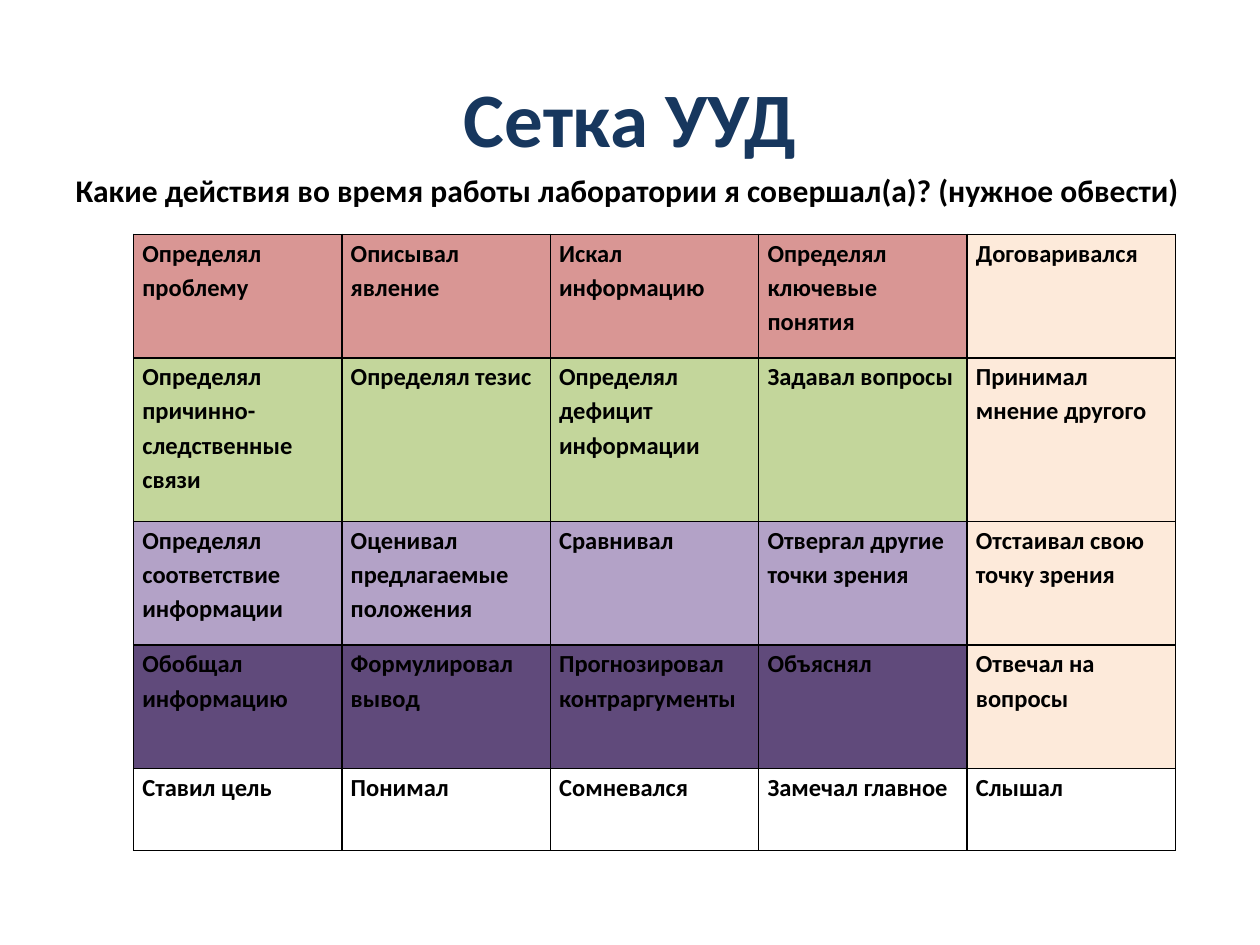
from dataclasses import dataclass

from lxml import etree
from pptx import Presentation
from pptx.dml.color import RGBColor
from pptx.enum.text import MSO_ANCHOR, PP_ALIGN
from pptx.oxml.ns import qn
from pptx.util import Inches, Pt

CENTER, LEFT = PP_ALIGN.CENTER, PP_ALIGN.LEFT
MIDDLE, TOP = MSO_ANCHOR.MIDDLE, MSO_ANCHOR.TOP
FONT = "Calibri"
COLORS = {
    "title": "17375E",
    "text": "000000",
    "border": "000000",
    "rose": "D99694",
    "green": "C3D69B",
    "lilac": "B3A2C7",
    "violet": "604A7B",
    "peach": "FDEADA",
}


@dataclass
class ActionRow:
    height: float
    fill: str | None
    last_fill: str | None
    actions: list[str]


ROWS = [
    ActionRow(0.98, "rose", "peach", [
        "Определял проблему", "Описывал явление", "Искал информацию",
        "Определял ключевые понятия", "Договаривался"]),
    ActionRow(1.3, "green", "peach", [
        "Определял причинно-следственные связи", "Определял тезис",
        "Определял дефицит информации", "Задавал вопросы",
        "Принимал мнение другого"]),
    ActionRow(0.98, "lilac", "peach", [
        "Определял соответствие информации", "Оценивал предлагаемые положения",
        "Сравнивал", "Отвергал другие точки зрения",
        "Отстаивал свою точку зрения"]),
    ActionRow(0.98, "violet", "peach", [
        "Обобщал информацию", "Формулировал вывод",
        "Прогнозировал контраргументы", "Объяснял", "Отвечал на вопросы"]),
    ActionRow(0.65, None, None, [
        "Ставил цель", "Понимал", "Сомневался", "Замечал главное", "Слышал"]),
]


def write_text(frame, text: str, *, size: float, color: str = "text",
               align=LEFT, line_spacing: float = 1.0, before: float = 0):
    para = frame.paragraphs[0]
    para.alignment = align
    para.line_spacing = line_spacing
    para.space_before = Pt(before)
    span = para.add_run()
    span.text = text
    span.font.name = FONT
    span.font.size = Pt(size)
    span.font.bold = True
    span.font.color.rgb = RGBColor.from_string(COLORS[color])
    return para


def place(box, left: float, top: float, width: float, height: float) -> None:
    box.left, box.top = Inches(left), Inches(top)
    box.width, box.height = Inches(width), Inches(height)


def remove_bullet(para) -> None:
    properties = para._p.get_or_add_pPr()
    properties.set("marL", "0")
    properties.set("indent", "0")
    etree.SubElement(properties, qn("a:buNone"))


def draw_borders(cell) -> None:
    properties = cell._tc.get_or_add_tcPr()
    for side in ("lnL", "lnR", "lnT", "lnB"):
        line = etree.SubElement(properties, qn(f"a:{side}"), w=str(Pt(1)))
        fill = etree.SubElement(line, qn("a:solidFill"))
        etree.SubElement(fill, qn("a:srgbClr"), val=COLORS["border"])


def draw_cell(cell, text: str, fill: str | None) -> None:
    draw_borders(cell)
    if fill:
        cell.fill.solid()
        cell.fill.fore_color.rgb = RGBColor.from_string(COLORS[fill])
    else:
        cell.fill.background()
    cell.margin_left = cell.margin_right = Inches(0.07)
    cell.margin_top = cell.margin_bottom = 0
    cell.vertical_anchor = TOP
    write_text(cell.text_frame, text, size=14, line_spacing=1.15)


def draw_table(page, rows: list[ActionRow]) -> None:
    column_count = len(rows[0].actions)
    height = sum(row.height for row in rows)
    table = page.shapes.add_table(
        len(rows), column_count, Inches(1.06), Inches(1.86),
        Inches(8.27), Inches(height)).table
    table.first_row = table.horz_banding = False
    for row_index, row in enumerate(rows):
        table.rows[row_index].height = Inches(row.height)
        fills = [row.fill] * (column_count - 1) + [row.last_fill]
        for column_index, (action, fill) in enumerate(zip(row.actions, fills)):
            draw_cell(table.cell(row_index, column_index), action, fill)


def main() -> None:
    deck = Presentation()
    deck.slide_width, deck.slide_height = Inches(10), Inches(7.5)
    page = deck.slides.add_slide(deck.slide_layouts[1])

    title, body = page.placeholders
    place(title, 0.5, 0.3, 9, 1.25)
    title.text_frame.vertical_anchor = MIDDLE
    write_text(title.text_frame, "Сетка УУД", size=44, color="title", align=CENTER)

    place(body, 0.5, 1.31, 9, 5.39)
    question = write_text(
        body.text_frame,
        "Какие действия во время работы лаборатории я совершал(а)? (нужное обвести)",
        size=18, before=3.6)
    remove_bullet(question)

    draw_table(page, ROWS)
    deck.save("out.pptx")


if __name__ == "__main__":
    main()
